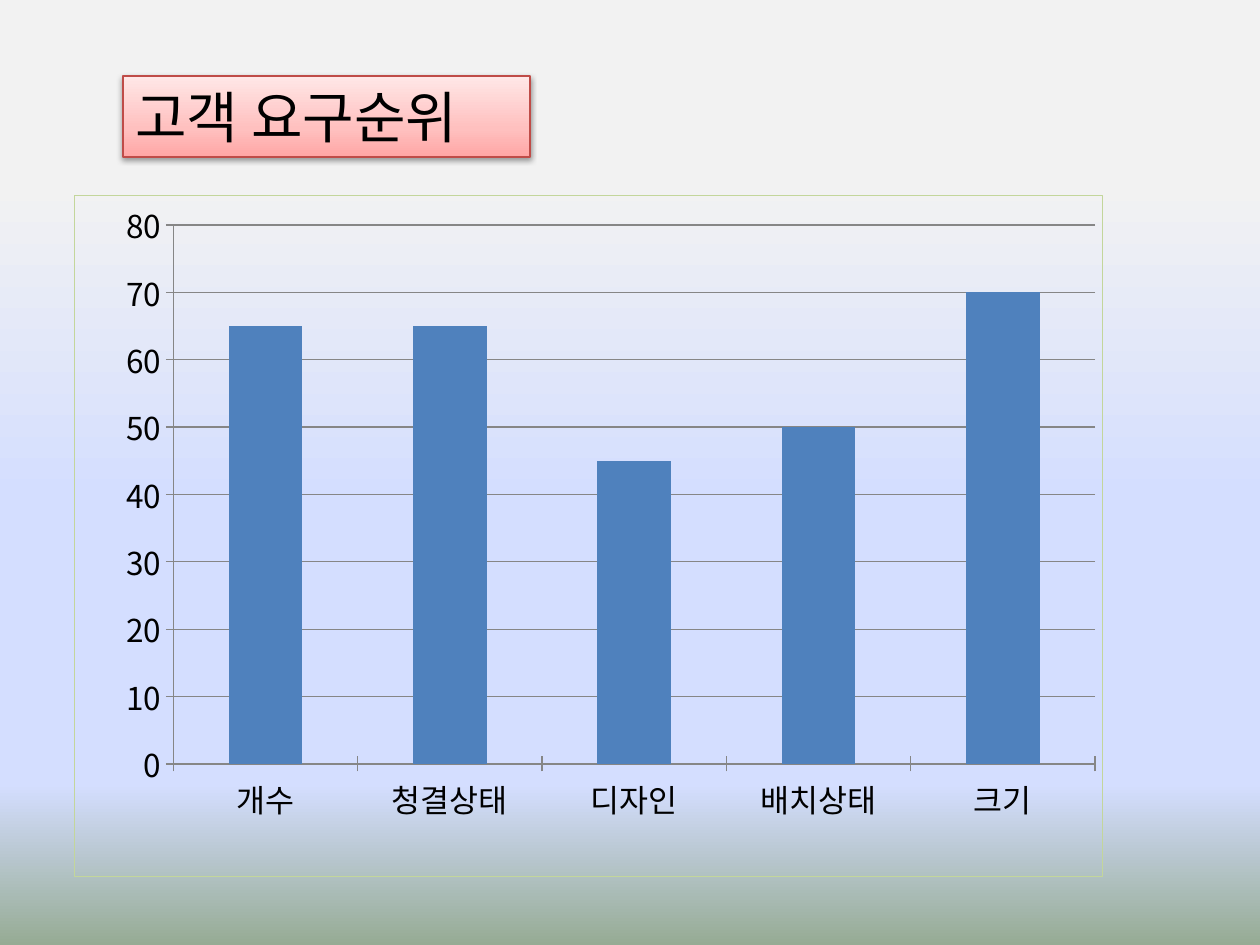
from lxml import etree
from pptx import Presentation
from pptx import util as u
from pptx.chart.data import CategoryChartData
from pptx.dml.color import RGBColor
from pptx.enum import chart as ch, shapes, text
from pptx.oxml import parse_xml
from pptx.oxml.ns import nsdecls, qn

PX = 914400 / 126
FONT = "Noto Sans CJK KR"
BLACK = RGBColor(0, 0, 0)
BAR_BLUE = RGBColor(0x4F, 0x81, 0xBD)
GRID_GRAY = RGBColor(0x86, 0x86, 0x86)
FRAME_GREEN = RGBColor(0xC3, 0xD6, 0x9B)
TITLE_RED = RGBColor(0xBF, 0x4C, 0x48)
RGB = RGBColor.from_string
SKY = [(19, RGB("F2F2F2")), (53, RGB("D4DEFF")), (83, RGB("D4DEFF")), (100, RGB("96AB94"))]
PINK = [(0, RGB("FFA6A5")), (35, RGB("FFC0BF")), (100, RGB("FFE7E7"))]

SLIDE_SIZE = (1260, 945)
TITLE = "고객 요구순위"
TITLE_AREA = (123, 76, 407, 81)
CHART_AREA = (74, 195, 1029, 682)
PLOT_AREA = {"x": 0.1, "y": 0.04, "w": 0.9, "h": 0.79}
PLOT_AREA.update(x=0.096, y=0.043, w=0.897, h=0.792)
DEMANDS = {"개수": 65, "청결상태": 65, "디자인": 45, "배치상태": 50, "크기": 70}


def px(*lengths):
    return [u.Emu(round(length * PX)) for length in lengths]


def set_gradient(fill, owner, stops, angle):
    """Fill with any number of stops; angle runs counter-clockwise."""
    fill.gradient()
    fill.gradient_angle = angle
    stop_list = next(owner.iter(qn("a:gsLst")))
    for old in list(stop_list):
        stop_list.remove(old)
    for percent, color in stops:
        stop = etree.SubElement(stop_list, qn("a:gs"), pos=str(percent * 1000))
        etree.SubElement(stop, qn("a:srgbClr"), val=str(color))


def set_font(font, size):
    font.name, font.size = FONT, u.Pt(size)
    font.color.rgb = BLACK


def add_shadow(shape):
    shape.element.spPr.append(parse_xml(
        f'<a:effectLst {nsdecls("a")}>'
        '<a:outerShdw blurRad="40000" dist="20000" dir="5400000" rotWithShape="0">'
        '<a:srgbClr val="000000"><a:alpha val="38000"/></a:srgbClr>'
        '</a:outerShdw></a:effectLst>'))


def add_title(slide):
    box = slide.shapes.add_shape(shapes.MSO_SHAPE.RECTANGLE, *px(*TITLE_AREA))
    set_gradient(box.fill, box.element, PINK, 90)
    box.line.color.rgb = TITLE_RED
    box.line.width = u.Pt(0.75)
    add_shadow(box)
    frame = box.text_frame
    frame.word_wrap = True
    frame.auto_size = text.MSO_AUTO_SIZE.SHAPE_TO_FIT_TEXT
    frame.vertical_anchor = text.MSO_ANCHOR.TOP
    para = frame.paragraphs[0]
    para.alignment = text.PP_ALIGN.LEFT
    span = para.add_run()
    span.text = TITLE
    set_font(span.font, 32)
    etree.SubElement(span.font._element, qn("a:ea"), typeface=FONT)


def frame_chart(chart):
    """Give the chart area an outline without a fill."""
    chart.element.find(qn("c:txPr")).addprevious(parse_xml(
        f'<c:spPr {nsdecls("c", "a")}><a:noFill/><a:ln w="9525"><a:solidFill>'
        f'<a:srgbClr val="{FRAME_GREEN}"/></a:solidFill></a:ln></c:spPr>'))


def place_plot(chart):
    plot_area = chart.element.find(".//" + qn("c:plotArea"))
    for old in plot_area.findall(qn("c:layout")):
        plot_area.remove(old)
    layout = etree.Element(qn("c:layout"))
    manual = etree.SubElement(layout, qn("c:manualLayout"))
    settings = [("layoutTarget", "inner"), ("xMode", "edge"), ("yMode", "edge")]
    for name, value in settings + list(PLOT_AREA.items()):
        etree.SubElement(manual, qn("c:" + name), val=str(value))
    plot_area.insert(0, layout)


def add_demand_chart(slide):
    data = CategoryChartData()
    data.categories = list(DEMANDS)
    data.add_series("Series 1", list(DEMANDS.values()))
    chart = slide.shapes.add_chart(
        ch.XL_CHART_TYPE.COLUMN_CLUSTERED, *px(*CHART_AREA), data).chart
    chart.has_legend = chart.has_title = False
    set_font(chart.font, 18)

    plot = chart.plots[0]
    plot.gap_width = 150
    plot.vary_by_categories = False
    bars = plot.series[0].format.fill
    bars.solid()
    bars.fore_color.rgb = BAR_BLUE

    values = chart.value_axis
    values.minimum_scale, values.maximum_scale, values.major_unit = 0, 80, 10
    values.has_major_gridlines = True
    chart.category_axis.has_major_gridlines = False
    for axis in (chart.category_axis, values):
        axis.major_tick_mark = ch.XL_TICK_MARK.CROSS
        axis.minor_tick_mark = ch.XL_TICK_MARK.NONE
    for part in (chart.category_axis, values, values.major_gridlines):
        part.format.line.color.rgb = GRID_GRAY
        part.format.line.width = u.Pt(0.75)
    frame_chart(chart)
    place_plot(chart)


def main():
    deck = Presentation()
    deck.slide_width, deck.slide_height = px(*SLIDE_SIZE)
    slide = deck.slides.add_slide(deck.slide_layouts[6])
    set_gradient(slide.background.fill, slide.element, SKY, 270)
    add_demand_chart(slide)
    add_title(slide)
    deck.save("out.pptx")


if __name__ == "__main__":
    main()
